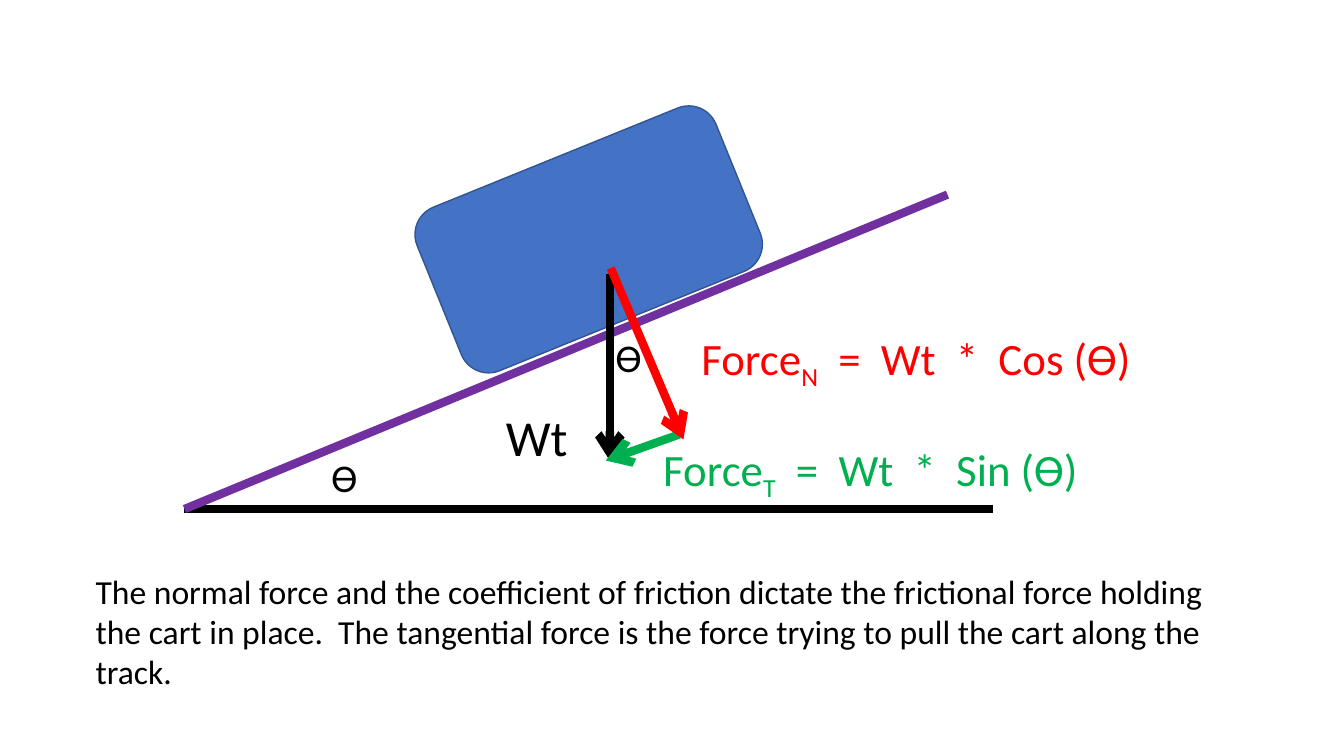
from lxml.etree import SubElement
from pptx import Presentation
from pptx.dml.color import RGBColor
from pptx.enum.shapes import MSO_CONNECTOR as Connector, MSO_SHAPE as Shape
from pptx.enum.text import MSO_AUTO_SIZE as AutoSize
from pptx.oxml.ns import qn
from pptx.util import Pt

BLACK = RGBColor(0x00, 0x00, 0x00)
PURPLE = RGBColor(0x70, 0x30, 0xA0)
BLUE = RGBColor(0x44, 0x72, 0xC4)
NAVY = RGBColor(0x32, 0x54, 0x91)
GREEN = RGBColor(0x00, 0xB0, 0x50)
RED = RGBColor(0xFF, 0x00, 0x00)

PAGE_SIZE = (960, 540)
FONT = "Calibri"
LINE_WIDTH = 6
SUBSCRIPT = "-25000"

CORNER = (131.8, 363.6)
TRACK = [
    (CORNER, (709.2, 363.6), BLACK),
    (CORNER, (676.8, 139), PURPLE),
]
CART = (305.3, 108, 230.4, 126)
CART_TILT = 337.9
FORCES = [
    ((435.6, 195.8), (435.6, 329), BLACK),
    ((485.3, 310.3), (432.7, 329), GREEN),
    ((436.3, 191.5), (488.2, 313.9), RED),
]

ANGLE_SIZE = (54, 41)
FORMULA_SIZE = (334.8, 46.1)
NOTE = (
    "The normal force and the coefficient of friction dictate the frictional force "
    "holding the cart in place.  The tangential force is the force trying to pull "
    "the cart along the track."
)
LABELS = [
    ((229.7, 320.4), ANGLE_SIZE, 28, BLACK, ["ϴ"]),
    ((432.7, 234.7), ANGLE_SIZE, 28, BLACK, ["ϴ"]),
    ((354.2, 286.6), (77.8, 51.1), 36, BLACK, ["Wt"]),
    ((493.9, 232.6), FORMULA_SIZE, 32, RED, ["Force", "N", "  =  Wt  *  Cos (ϴ)"]),
    ((466.6, 311.8), FORMULA_SIZE, 32, GREEN, ["Force", "T", "  =  Wt  *  Sin (ϴ)"]),
    ((61.2, 403.9), (826.6, 94.3), 24, BLACK, [NOTE]),
]


def points(*values):
    return [Pt(value) for value in values]


def add_line(page, start, end, color, arrow=False):
    line = page.shapes.add_connector(Connector.STRAIGHT, *points(*start, *end))
    line.line.color.rgb = color
    line.line.width = Pt(LINE_WIDTH)
    if arrow:
        SubElement(line.line._get_or_add_ln(), qn("a:tailEnd"), type="arrow")
    SubElement(line._element.spPr, qn("a:effectLst"))


def add_cart(page):
    cart = page.shapes.add_shape(Shape.ROUNDED_RECTANGLE, *points(*CART))
    cart.rotation = CART_TILT
    cart.shadow.inherit = False
    cart.fill.solid()
    cart.fill.fore_color.rgb = BLUE
    cart.line.color.rgb = NAVY
    cart.line.width = Pt(1)


def add_label(page, place, extent, size, color, pieces):
    box = page.shapes.add_textbox(*points(*place, *extent))
    box.text_frame.word_wrap = True
    box.text_frame.auto_size = AutoSize.SHAPE_TO_FIT_TEXT
    para = box.text_frame.paragraphs[0]
    for index, piece in enumerate(pieces):
        span = para.add_run()
        span.text = piece
        for name, value in {"name": FONT, "size": Pt(size)}.items():
            setattr(span.font, name, value)
        span.font.color.rgb = color
        if index == 1:
            span.font._element.set("baseline", SUBSCRIPT)


def main():
    deck = Presentation()
    deck.slide_width, deck.slide_height = points(*PAGE_SIZE)
    page = deck.slides.add_slide(deck.slide_layouts[6])
    for segment in TRACK:
        add_line(page, *segment)
    add_cart(page)
    for force in FORCES:
        add_line(page, *force, arrow=True)
    for label in LABELS:
        add_label(page, *label)
    deck.save("out.pptx")


if __name__ == "__main__":
    main()
